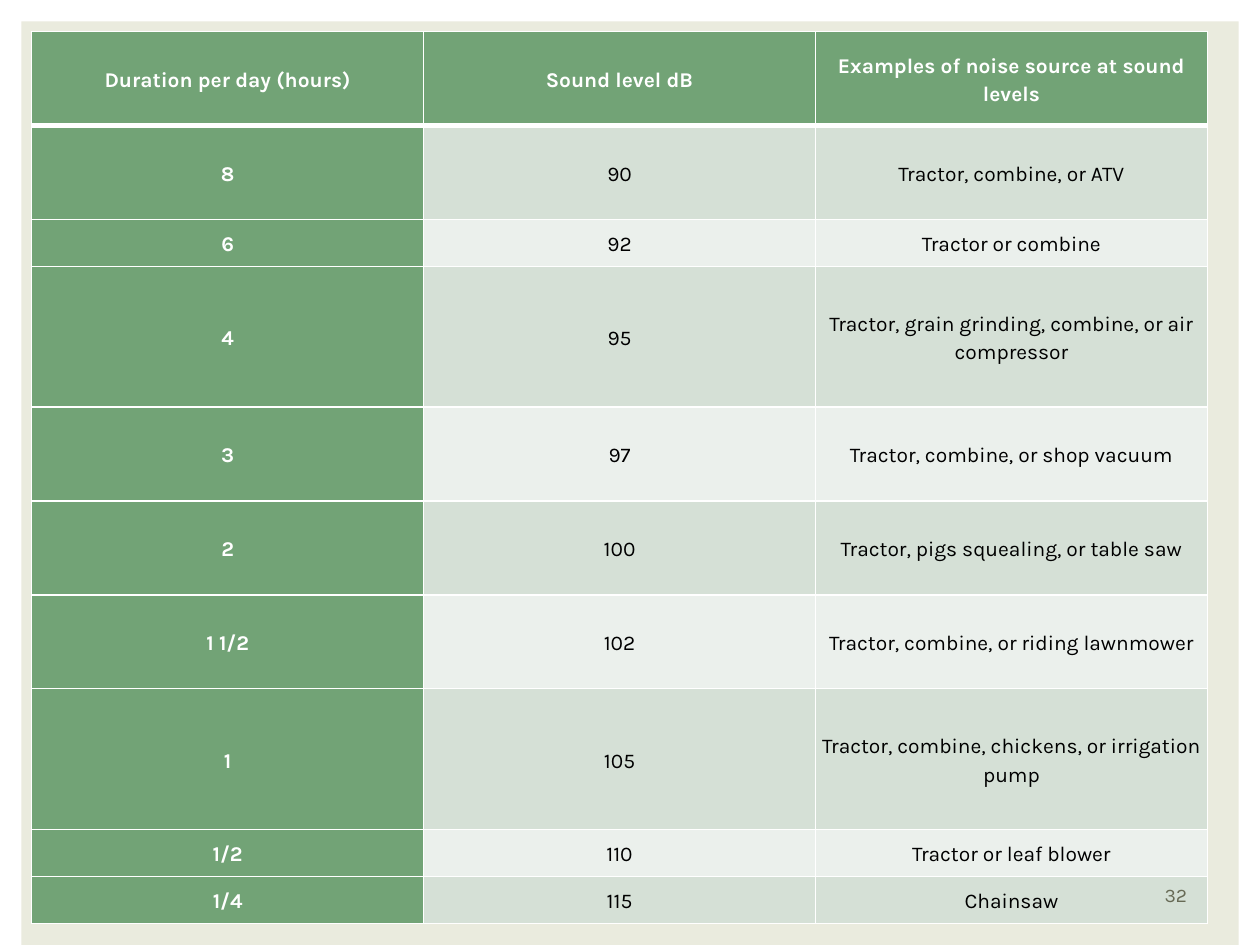
from lxml import etree
from pptx import Presentation
from pptx import util as u
from pptx.dml.color import RGBColor
from pptx.enum import shapes, text
from pptx.oxml import ns

FONT = "Karla"
WHITE, BLACK, GREEN = "FFFFFF", "000000", "72A376"
BANDS = ("D5E0D6", "EBF0EC")

HEADERS = ("Duration per day (hours)", "Sound level dB",
           "Examples of noise source at sound levels")
# Row height in units, then the cell texts
EXPOSURES = (
    (2, "8", "90", "Tractor, combine, or ATV"),
    (1, "6", "92", "Tractor or combine"),
    (3, "4", "95", "Tractor, grain grinding, combine, or air compressor"),
    (2, "3", "97", "Tractor, combine, or shop vacuum"),
    (2, "2", "100", "Tractor, pigs squealing, or table saw"),
    (2, "1 1/2", "102", "Tractor, combine, or riding lawnmower"),
    (3, "1", "105", "Tractor, combine, chickens, or irrigation pump"),
    (1, "1/2", "110", "Tractor or leaf blower"),
    (1, "1/4", "115", "Chainsaw"),
)


def color(hex_string):
    return RGBColor.from_string(hex_string)


def add_run(paragraph, words, size, hex_color, bold=False):
    paragraph.alignment = text.PP_ALIGN.CENTER
    run = paragraph.add_run()
    run.text = words
    run.font.name = FONT
    run.font.size = u.Pt(size)
    run.font.bold = bold
    run.font.color.rgb = color(hex_color)


def set_borders(cell, top=1, bottom=1):
    """Draw white borders, with widths in points."""
    properties = cell._tc.get_or_add_tcPr()
    for side, width in (("L", 1), ("R", 1), ("T", top), ("B", bottom)):
        line = etree.SubElement(properties, ns.qn(f"a:ln{side}"), w=str(u.Pt(width)))
        fill = etree.SubElement(line, ns.qn("a:solidFill"))
        etree.SubElement(fill, ns.qn("a:srgbClr"), val=WHITE)


def format_cell(cell, words, fill, strong):
    cell.margin_left = cell.margin_right = u.Cm(0.02)
    cell.margin_top = cell.margin_bottom = u.Cm(0.02)
    cell.vertical_anchor = text.MSO_ANCHOR.MIDDLE
    cell.fill.solid()
    cell.fill.fore_color.rgb = color(fill)
    paragraph = cell.text_frame.paragraphs[0]
    paragraph.line_spacing = 1.15
    add_run(paragraph, words, 12, WHITE if strong else BLACK, strong)


def add_background_panel(slide):
    panel = slide.shapes.add_shape(shapes.MSO_SHAPE.RECTANGLE, u.Cm(0.43), u.Cm(0.43),
                                   u.Cm(24.54), u.Cm(18.64))
    panel.shadow.inherit = False
    panel.fill.solid()
    panel.fill.fore_color.rgb = color("EAEBDE")
    panel.line.fill.background()


def add_noise_table(slide):
    rows = ((2, *HEADERS), *EXPOSURES)
    width, height = u.Cm(23.7), u.Cm(17.98)
    table = slide.shapes.add_table(len(rows), len(HEADERS), u.Cm(0.64), u.Cm(0.64),
                                   width, height).table
    for column in table.columns:
        column.width = width // len(HEADERS)
    unit = height / sum(row[0] for row in rows)
    for row_index, (units, *words) in enumerate(rows):
        table.rows[row_index].height = int(unit * units)
        for column_index, cell_text in enumerate(words):
            cell = table.cell(row_index, column_index)
            strong = row_index == 0 or column_index == 0
            set_borders(cell, top=3 if row_index == 1 else 1,
                        bottom=3 if row_index == 0 else 1)
            fill = GREEN if strong else BANDS[(row_index - 1) % 2]
            format_cell(cell, cell_text, fill, strong)


def add_slide_number(slide, number):
    box = slide.shapes.add_textbox(u.Cm(22.89), u.Cm(17.65), u.Cm(1.63), u.Cm(0.76))
    frame = box.text_frame
    frame.word_wrap = True
    frame.vertical_anchor = text.MSO_ANCHOR.MIDDLE
    add_run(frame.paragraphs[0], number, 11, "676A55")


def main():
    presentation = Presentation()
    presentation.slide_width, presentation.slide_height = u.Cm(25.4), u.Cm(19.05)
    slide = presentation.slides.add_slide(presentation.slide_layouts[6])
    add_background_panel(slide)
    add_noise_table(slide)
    add_slide_number(slide, "32")
    presentation.save("out.pptx")


if __name__ == "__main__":
    main()
